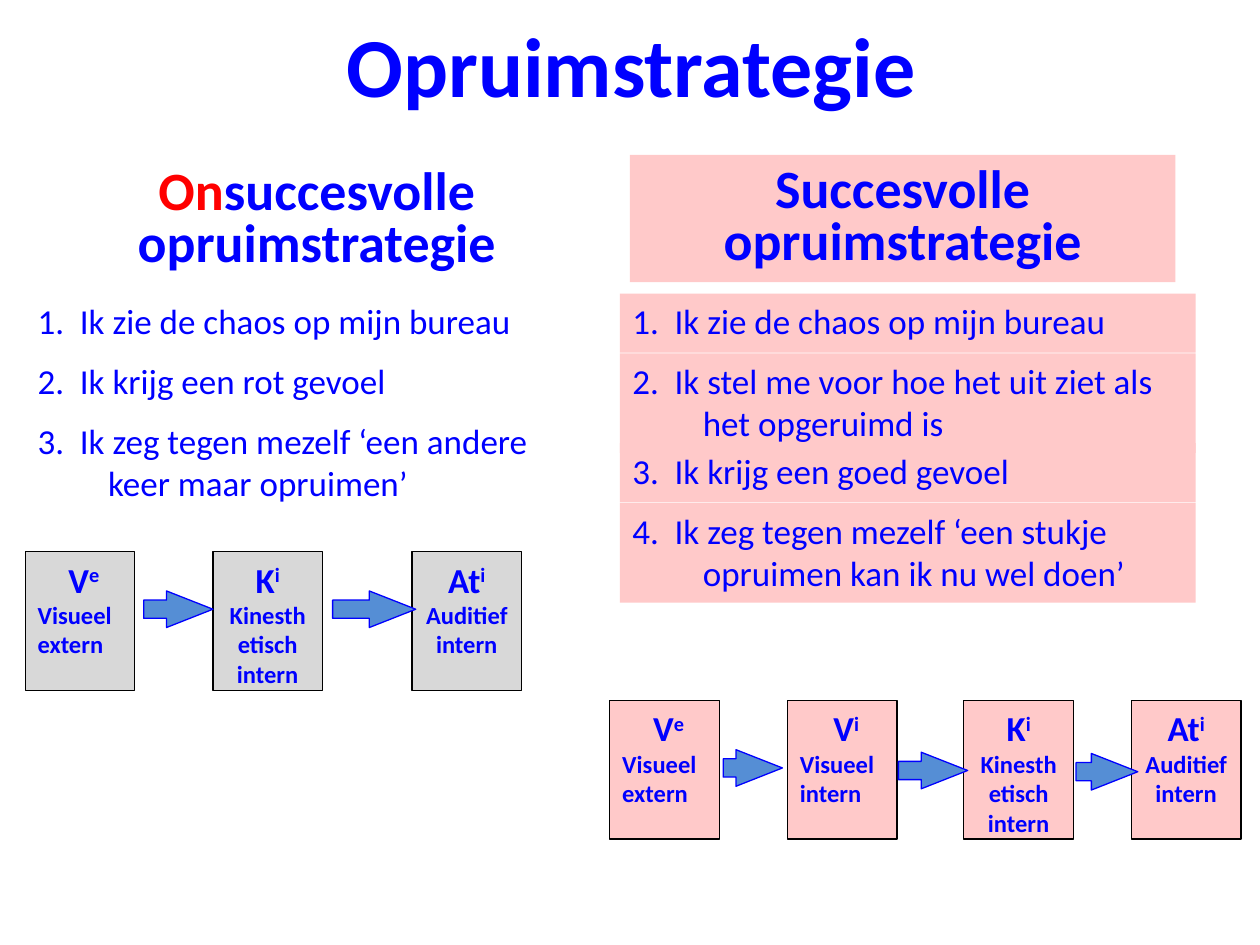
import pptx
import pptx.util
import pptx.dml.color
import pptx.enum.shapes
import pptx.enum.text

WIDTH, HEIGHT = 10, 7.5
FONT = "Calibri"
COLORS = {"blue": "0000FF", "red": "FF0000", "pink": "FFC9C9",
          "grey": "D8D8D8", "arrow": "558ED5", "black": "000000"}
ALIGN = pptx.enum.text.PP_ALIGN
ANCHOR = pptx.enum.text.MSO_ANCHOR
SHAPE = pptx.enum.shapes.MSO_SHAPE
LIST_TOP = 2.33
LINE_STEP = 0.475
BOX_WIDTH, BOX_HEIGHT = 0.87, 1.1

UNSUCCESSFUL_STEPS = [
    ("1.  Ik zie de chaos op mijn bureau", 0, 0.47),
    ("2.  Ik krijg een rot gevoel", 1, 0.47),
    ("3.  Ik zeg tegen mezelf ‘een andere keer maar opruimen’", 2, 0.79),
]
SUCCESSFUL_STEPS = [
    ("1.  Ik zie de chaos op mijn bureau", 0, 0.47),
    ("2.  Ik stel me voor hoe het uit ziet als het opgeruimd is", 1, 0.79),
    ("3.  Ik krijg een goed gevoel", 2.5, 0.47),
    ("4.  Ik zeg tegen mezelf ‘een stukje opruimen kan ik nu wel doen’", 3.5, 0.79),
]


def visual(sign, place):
    return [(ALIGN.CENTER, [(" V", 20, 0), (sign, 20, 30)]),
            (ALIGN.LEFT, [("Visueel", 14, 0)]),
            (ALIGN.LEFT, [(place, 14, 0)])]


KINESTHETIC = [(ALIGN.CENTER, [("K", 20, 0), ("i ", 20, 30),
                               ("Kinesthetisch intern", 14, 0)])]
AUDITORY = [(ALIGN.CENTER, [("At", 20, 0), ("i", 20, 30)]),
            (ALIGN.CENTER, [("Auditief intern", 14, 0)])]


def rgb(name):
    return pptx.dml.color.RGBColor.from_string(COLORS[name])


def apply(target, values):
    for name, value in values.items():
        setattr(target, name, value)


def place(*lengths):
    return [pptx.util.Inches(length) for length in lengths]


def add_run(paragraph, text, size, color="blue", bold=True, baseline=0):
    run = paragraph.add_run()
    run.text = text
    apply(run.font, {"name": FONT, "size": pptx.util.Pt(size), "bold": bold})
    run.font.color.rgb = rgb(color)
    if baseline:
        run._r.get_or_add_rPr().set("baseline", str(baseline * 1000))


def add_panel(slide, position, fill=None, line=None, kind=SHAPE.RECTANGLE,
              anchor=ANCHOR.TOP):
    if fill:
        shape = slide.shapes.add_shape(kind, *place(*position))
        shape.shadow.inherit = False
        shape.fill.solid()
        shape.fill.fore_color.rgb = rgb(fill)
        if line:
            shape.line.color.rgb = rgb(line)
            shape.line.width = pptx.util.Pt(0.75)
        else:
            shape.line.fill.background()
    else:
        shape = slide.shapes.add_textbox(*place(*position))
    apply(shape.text_frame, {"word_wrap": True, "vertical_anchor": anchor})
    return shape


def add_title(slide, text):
    title = slide.shapes.title
    apply(title, dict(zip(("left", "top", "width", "height"),
                          place(0.51, 0, 0.9 * WIDTH, 1.01))))
    title.text_frame.vertical_anchor = ANCHOR.MIDDLE
    paragraph = title.text_frame.paragraphs[0]
    paragraph.alignment = ALIGN.CENTER
    add_run(paragraph, text, 48)


def add_heading(slide, left, top, parts, fill=None):
    shape = add_panel(slide, (left, top, 4.33, 1.01), fill, anchor=ANCHOR.MIDDLE)
    paragraph = shape.text_frame.paragraphs[0]
    apply(paragraph, {"alignment": ALIGN.CENTER, "line_spacing": 0.8})
    for text, color in parts:
        add_run(paragraph, text, 30.8, color)


def add_steps(slide, left, steps, fill=None):
    for text, row, height in steps:
        top = LIST_TOP + row * LINE_STEP
        shape = add_panel(slide, (left, top, 4.57, height), fill)
        paragraph = shape.text_frame.paragraphs[0]
        apply(paragraph, {"alignment": ALIGN.LEFT, "space_before": pptx.util.Pt(1)})
        properties = paragraph._p.get_or_add_pPr()
        indent = pptx.util.Inches(0.56)
        properties.set("marL", str(indent))
        properties.set("indent", str(-indent))
        add_run(paragraph, text, 20, bold=False)


def add_chain(slide, top, fill, boxes, arrows):
    for left, content in boxes:
        shape = add_panel(slide, (left, top, BOX_WIDTH, BOX_HEIGHT), fill, "black")
        frame = shape.text_frame
        for index, (alignment, runs) in enumerate(content):
            paragraph = frame.add_paragraph() if index else frame.paragraphs[0]
            paragraph.alignment = alignment
            for text, size, baseline in runs:
                add_run(paragraph, text, size, baseline=baseline)
    for left, arrow_top, width in arrows:
        arrow = add_panel(slide, (left, arrow_top, width, 0.29), "arrow", "blue",
                          SHAPE.RIGHT_ARROW)
        arrow.adjustments[0] = 0.5
        arrow.adjustments[1] = 1.27


def main():
    presentation = pptx.Presentation()
    apply(presentation, {"slide_width": pptx.util.Inches(WIDTH),
                         "slide_height": pptx.util.Inches(HEIGHT)})
    slide = presentation.slides.add_slide(presentation.slide_layouts[5])
    add_title(slide, "Opruimstrategie")
    add_heading(slide, 0.35, 1.25,
                [("On", "red"), ("succesvolle opruimstrategie", "blue")])
    add_heading(slide, 5, 1.23, [("Succesvolle opruimstrategie", "blue")], "pink")
    add_steps(slide, 0.2, UNSUCCESSFUL_STEPS)
    add_steps(slide, 4.92, SUCCESSFUL_STEPS, "pink")
    add_chain(slide, 4.38, "grey",
              [(0.2, visual("e", "extern")), (1.69, KINESTHETIC), (3.27, AUDITORY)],
              [(1.14, 4.69, 0.55), (2.64, 4.69, 0.66)])
    add_chain(slide, 5.56, "pink",
              [(4.84, visual("e", "extern")), (6.25, visual("i", "intern")),
               (7.65, KINESTHETIC), (8.98, AUDITORY)],
              [(5.74, 5.95, 0.47), (7.13, 5.97, 0.55), (8.54, 5.98, 0.49)])
    presentation.save("out.pptx")


if __name__ == "__main__":
    main()
